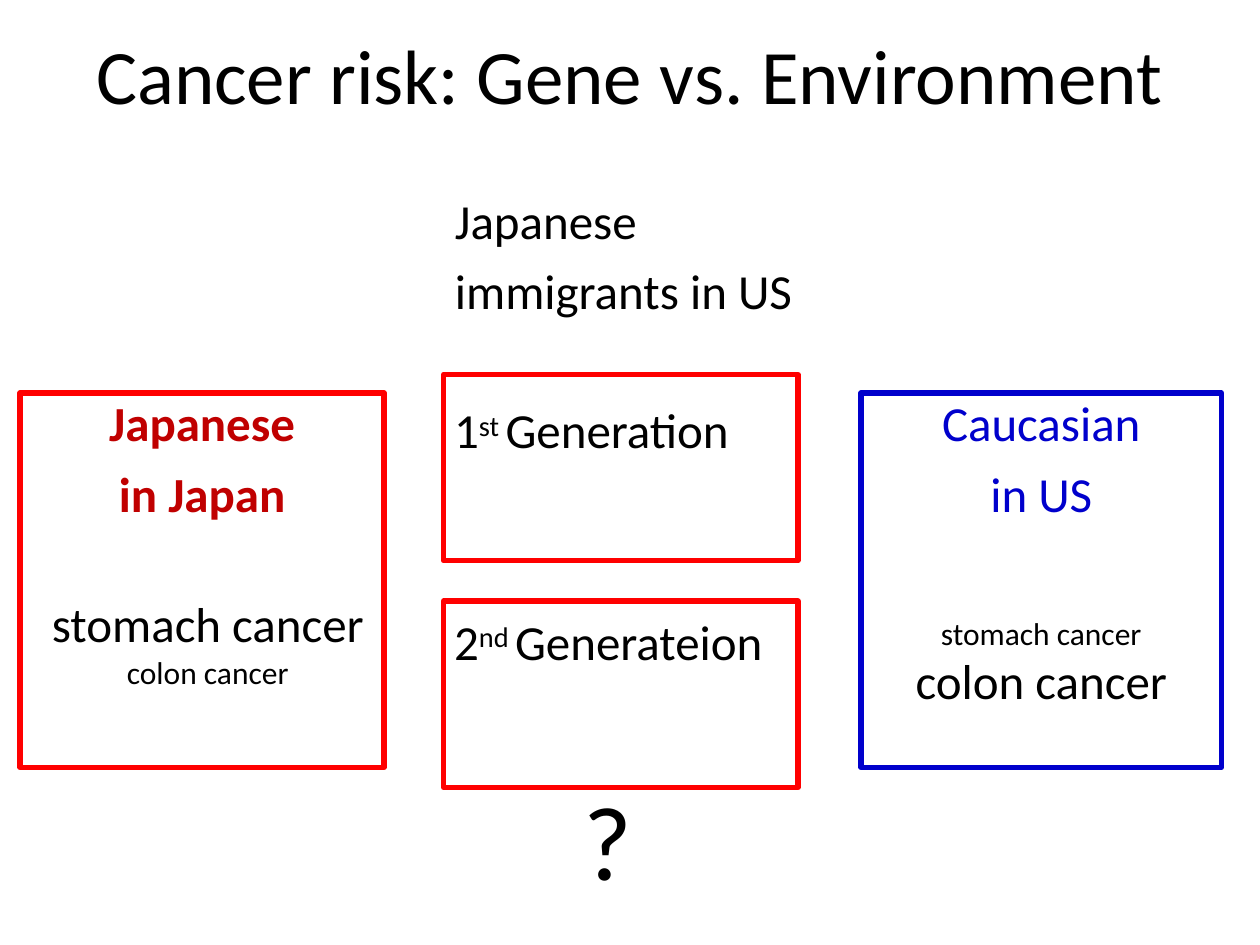
from pptx import Presentation, util as u
from pptx.dml.color import RGBColor
from pptx.enum import shapes, text

BLACK, RED, DARK_RED, BLUE = "000000", "FF0000", "C00000", "0000CC"
LARGE, SMALL = 28, 18


def paint(color_format, value):
    """Set a colour from a hex string."""
    color_format.rgb = RGBColor.from_string(value)


def format_frame(shape, top_inset=0, anchor=text.MSO_ANCHOR.TOP):
    """Set margins, wrapping and anchor of a shape's text and return its frame."""
    frame = shape.text_frame
    values = {
        "margin_left": 0, "margin_right": 0, "margin_bottom": 0,
        "margin_top": u.Pt(top_inset), "word_wrap": True,
        "auto_size": text.MSO_AUTO_SIZE.NONE, "vertical_anchor": anchor,
    }
    for name, value in values.items():
        setattr(frame, name, value)
    return frame


def add_run(paragraph, wording, size=LARGE, color=BLACK, bold=False, baseline=0):
    """Add a formatted run, raised by the baseline percentage."""
    run = paragraph.add_run()
    run.text = wording
    for name, value in {"name": "Calibri", "size": u.Pt(size), "bold": bold}.items():
        setattr(run.font, name, value)
    paint(run.font.color, color)
    if baseline:
        run.font._element.set("baseline", str(baseline * 1000))


def format_paragraph(paragraph, indent=0, first_line=0, **values):
    """Apply indents and a dict of paragraph settings."""
    properties = paragraph._p.get_or_add_pPr()
    properties.set("marL", str(u.Pt(indent)))
    properties.set("indent", str(u.Pt(first_line)))
    for name, value in values.items():
        setattr(paragraph, name, value)


def add_title(slide, wording):
    """Fill and place the title placeholder."""
    title = slide.shapes.title
    place = {"left": 54, "top": 16, "width": 612, "height": 56}
    for name, value in place.items():
        setattr(title, name, u.Pt(value))
    paragraph = format_frame(title).paragraphs[0]
    format_paragraph(paragraph, alignment=text.PP_ALIGN.CENTER)
    add_run(paragraph, wording, 44)


def add_label(slide, wording, place, size=LARGE, line_spacing=1.0):
    """Add a plain left-aligned text box."""
    box = slide.shapes.add_textbox(*map(u.Pt, place))
    paragraph = format_frame(box).paragraphs[0]
    format_paragraph(paragraph, line_spacing=line_spacing)
    add_run(paragraph, wording, size)


def add_frame(slide, place, line_color, top_inset=0):
    """Add an outlined rectangle and return its text frame."""
    shape = slide.shapes.add_shape(shapes.MSO_SHAPE.RECTANGLE, *map(u.Pt, place))
    shape.shadow.inherit = False
    shape.fill.background()
    shape.line.width = u.Pt(3)
    paint(shape.line.color, line_color)
    return format_frame(shape, top_inset)


def add_generation(slide, top, top_inset, number, suffix, noun):
    """Add a generation box with a raised ordinal suffix."""
    frame = add_frame(slide, (253.5, top, 202.5, 106.5), RED, top_inset)
    paragraph = frame.paragraphs[0]
    format_paragraph(paragraph, indent=6, alignment=text.PP_ALIGN.LEFT)
    add_run(paragraph, number)
    add_run(paragraph, suffix + " ", baseline=26)
    add_run(paragraph, noun)


def add_population(slide, left, width, line_color, lines):
    """Add a population box holding centred lines."""
    frame = add_frame(slide, (left, 224.5, width, 214), line_color)
    for index, (wording, font, layout) in enumerate(lines):
        paragraph = frame.add_paragraph() if index else frame.paragraphs[0]
        format_paragraph(paragraph, alignment=text.PP_ALIGN.CENTER, **layout)
        add_run(paragraph, wording, **font)


def main():
    """Build and save the slide."""
    presentation = Presentation()
    presentation.slide_width, presentation.slide_height = u.Pt(720), u.Pt(540)
    slide = presentation.slides.add_slide(presentation.slide_layouts[5])

    add_title(slide, "Cancer risk: Gene vs. Environment")
    add_label(slide, "Japanese immigrants in US", (260, 102, 194, 83), line_spacing=1.2)
    add_generation(slide, 214, 14.5, "1", "st", "Generation")
    add_generation(slide, 343.5, 6, "2", "nd", "Generateion")

    heading = {"color": DARK_RED, "bold": True}
    add_population(slide, 11.5, 208, RED, [
        ("Japanese", heading, {}),
        ("in Japan", heading, {"space_before": u.Pt(6.7)}),
        ("stomach cancer", {}, {"indent": 6.5, "space_before": u.Pt(41)}),
        ("colon cancer", {"size": SMALL}, {"indent": 6.5}),
    ])
    heading = {"color": BLUE}
    add_population(slide, 492, 206, BLUE, [
        ("Caucasian", heading, {}),
        ("in US", heading, {"space_before": u.Pt(6.7)}),
        ("stomach cancer", {"size": SMALL},
         {"first_line": -13.5, "space_before": u.Pt(52.5), "line_spacing": u.Pt(21.3)}),
        ("colon cancer", {}, {"first_line": -13.5, "line_spacing": u.Pt(33.3)}),
    ])
    add_label(slide, "?", (333.5, 443, 30, 76), 60)
    presentation.save("out.pptx")


if __name__ == "__main__":
    main()
